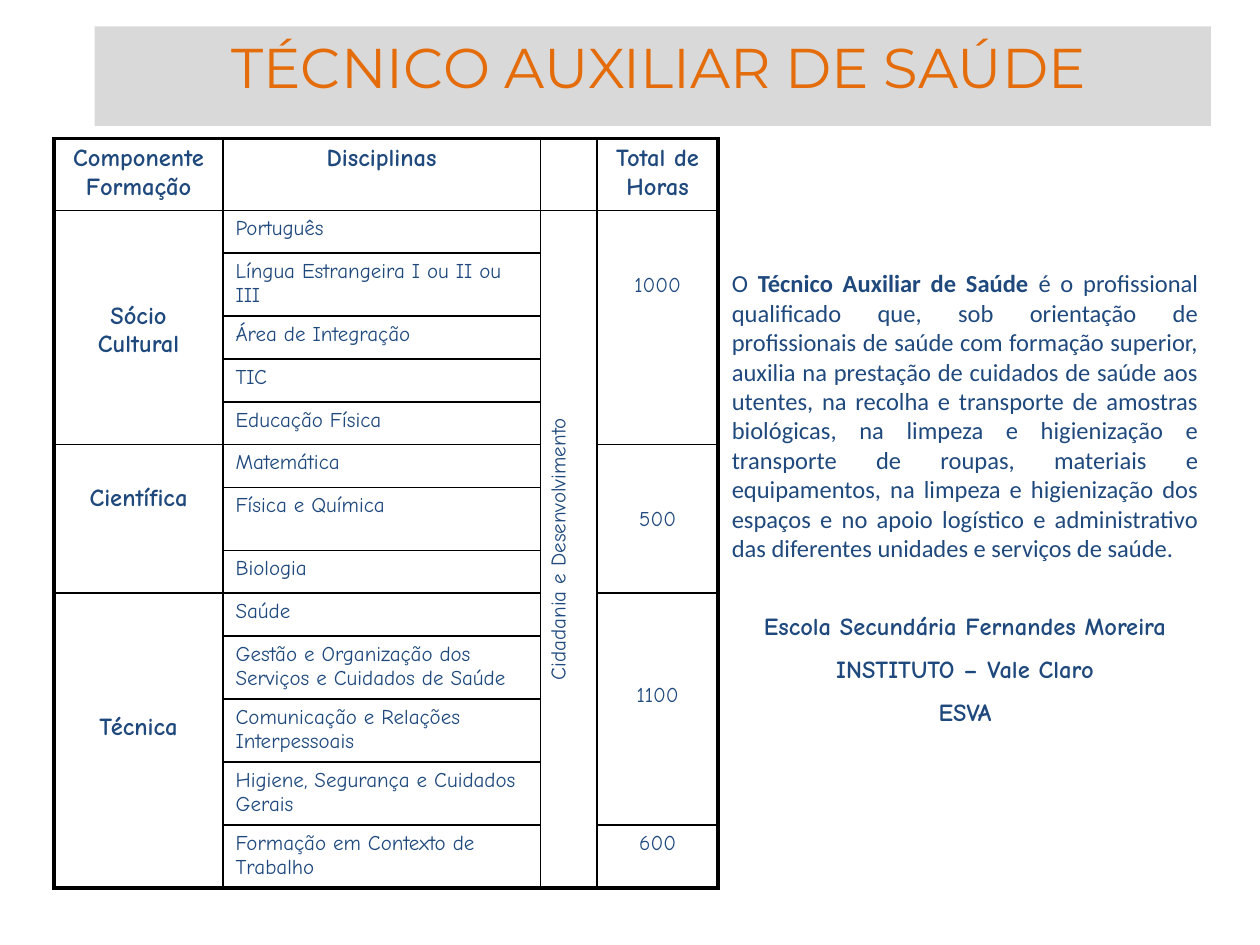
from lxml import etree
from pptx import Presentation
from pptx.dml.color import RGBColor
from pptx.enum.text import MSO_ANCHOR, PP_ALIGN
from pptx.oxml.ns import qn
from pptx.util import Inches, Pt

NAVY = RGBColor(0x1F, 0x49, 0x7D)
ORANGE = RGBColor(0xE4, 0x6C, 0x0A)
GREY = RGBColor(0xD9, 0xD9, 0xD9)
BLACK = RGBColor(0, 0, 0)

# Content
TITLE = "TÉCNICO AUXILIAR DE SAÚDE"
HEADERS = ["Componente Formação", "Disciplinas", "", "Total de Horas"]
SUBJECTS = [
    "Português", "Língua Estrangeira I ou II ou III", "Área de Integração", "TIC",
    "Educação Física", "Matemática", "Física e Química", "Biologia", "Saúde",
    "Gestão e Organização dos Serviços e Cuidados de Saúde",
    "Comunicação e Relações Interpessoais",
    "Higiene, Segurança e Cuidados Gerais", "Formação em Contexto de Trabalho",
]
TALL_SUBJECTS = {1, 6, 9, 10, 11, 12}
# Text, number of rows, space above the text in inches
COMPONENTS = [("Sócio Cultural", 5, 0.73), ("Científica", 3, 0.32), ("Técnica", 5, 0.95)]
HOURS = [("1000", 5, 0.5), ("500", 3, 0.5), ("1100", 4, 0.72), ("600", 1, 0.05)]
CITIZENSHIP = "Cidadania e Desenvolvimento"
PROFILE = [
    ("O ", False),
    ("Técnico Auxiliar de Saúde ", True),
    ("é o profissional qualificado que, sob orientação de profissionais de saúde com "
     "formação superior, auxilia na prestação de cuidados de saúde aos utentes, na "
     "recolha e transporte de amostras biológicas, na limpeza e higienização e "
     "transporte de roupas, materiais e equipamentos, na limpeza e higienização dos "
     "espaços e no apoio logístico e administrativo das diferentes unidades e "
     "serviços de saúde.", False),
]
SCHOOLS = ["Escola Secundária Fernandes Moreira", "INSTITUTO – Vale Claro", "ESVA"]

# Text formats
TITLE_FONT = {"name": "Montserrat", "size": Pt(32), "bold": False}
STRONG = {"name": "Comic Neue", "size": Pt(14), "bold": True}
PLAIN = {"name": "Comic Neue", "size": Pt(12), "bold": False}
BODY = {"name": "Calibri", "size": Pt(14)}

COLUMN_WIDTHS = [1.34, 2.52, 0.45, 0.96]
ROW_HEIGHTS = [0.57] + [0.5 if i in TALL_SUBJECTS else 0.34 for i in range(len(SUBJECTS))]
LAST_ROW, LAST_COLUMN = len(ROW_HEIGHTS) - 1, len(COLUMN_WIDTHS) - 1
THICK, THIN = Pt(2.25), Pt(1)


def add_span(para, text, font_format, color=NAVY):
    span = para.add_run()
    span.text = text
    for name, value in font_format.items():
        setattr(span.font, name, value)
    span.font.color.rgb = color


def fill_cell(cell, text, font_format, align=PP_ALIGN.CENTER, top=0.05):
    cell.margin_top = Inches(top)
    para = cell.text_frame.paragraphs[0]
    para.alignment = align
    if text:
        add_span(para, text, font_format)


def fill_merged_column(table, column, groups, font_format):
    row = 1
    for text, count, top in groups:
        cell = table.cell(row, column)
        if count > 1:
            cell.merge(table.cell(row + count - 1, column))
        fill_cell(cell, text, font_format, top=top)
        row += count


def set_borders(cell, widths):
    """Draw the given sides; a width of None leaves a side without a line."""
    properties = cell._tc.get_or_add_tcPr()
    for side, width in widths.items():
        line = etree.SubElement(properties, qn(f"a:ln{side}"))
        if width is None:
            etree.SubElement(line, qn("a:noFill"))
            continue
        line.set("w", str(int(width)))
        solid = etree.SubElement(line, qn("a:solidFill"))
        etree.SubElement(solid, qn("a:srgbClr"), val=str(BLACK))


def add_title(page):
    title = page.shapes.title
    title.left, title.top = Inches(0.75), Inches(0.21)
    title.width, title.height = Inches(8.86), Inches(0.79)
    title.fill.solid()
    title.fill.fore_color.rgb = GREY
    frame = title.text_frame
    frame.word_wrap = False
    frame.vertical_anchor = MSO_ANCHOR.TOP
    frame.margin_left = Inches(0.2)
    para = frame.paragraphs[0]
    para.alignment = PP_ALIGN.CENTER
    add_span(para, TITLE, TITLE_FONT, ORANGE)


def add_course_table(page):
    table = page.shapes.add_table(
        len(ROW_HEIGHTS), len(COLUMN_WIDTHS), Inches(0.43), Inches(1.1),
        Inches(sum(COLUMN_WIDTHS)), Inches(sum(ROW_HEIGHTS))).table
    table.first_row = table.horz_banding = False
    for column, width in zip(table.columns, COLUMN_WIDTHS):
        column.width = Inches(width)
    for row, height in zip(table.rows, ROW_HEIGHTS):
        row.height = Inches(height)

    # Text and merged cells
    for column, text in enumerate(HEADERS):
        fill_cell(table.cell(0, column), text, STRONG)
    for row, text in enumerate(SUBJECTS, start=1):
        fill_cell(table.cell(row, 1), text, PLAIN, PP_ALIGN.LEFT)
    fill_merged_column(table, 0, COMPONENTS, STRONG)
    fill_merged_column(table, 2, [(CITIZENSHIP, len(SUBJECTS), 0.05)], PLAIN)
    fill_merged_column(table, 3, HOURS, PLAIN)
    table.cell(1, 2)._tc.get_or_add_tcPr().set("vert", "vert270")

    # Thick outer frame, thin inner lines
    for row in range(LAST_ROW + 1):
        for column in range(LAST_COLUMN + 1):
            cell = table.cell(row, column)
            end_row = row + cell.span_height - 1 if cell.is_merge_origin else row
            inner = cell.is_spanned
            next_spanned = row < LAST_ROW and table.cell(row + 1, column).is_spanned
            bottom = THICK if end_row == LAST_ROW else THIN
            set_borders(cell, {
                "L": THICK if column == 0 else THIN,
                "R": THICK if column == LAST_COLUMN else THIN,
                "T": None if inner else THICK if row == 0 else THIN,
                "B": None if inner and next_spanned else bottom,
            })
            cell.fill.background()


def add_profile(page):
    box = page.shapes.add_textbox(Inches(5.71), Inches(2.08), Inches(3.9), Inches(4.78))
    frame = box.text_frame
    frame.word_wrap = True
    para = frame.paragraphs[0]
    para.alignment = PP_ALIGN.JUSTIFY
    for text, bold in PROFILE:
        add_span(para, text, {**BODY, "bold": bold})
    for index, school in enumerate(SCHOOLS):
        para = frame.add_paragraph()
        para.alignment = PP_ALIGN.CENTER
        para.space_before = Pt(7.5 if index else 28)
        add_span(para, school, STRONG)


def main():
    deck = Presentation()
    deck.slide_width, deck.slide_height = Inches(10), Inches(7.5)
    page = deck.slides.add_slide(deck.slide_layouts[5])
    add_title(page)
    add_course_table(page)
    add_profile(page)
    deck.save("out.pptx")


if __name__ == "__main__":
    main()
